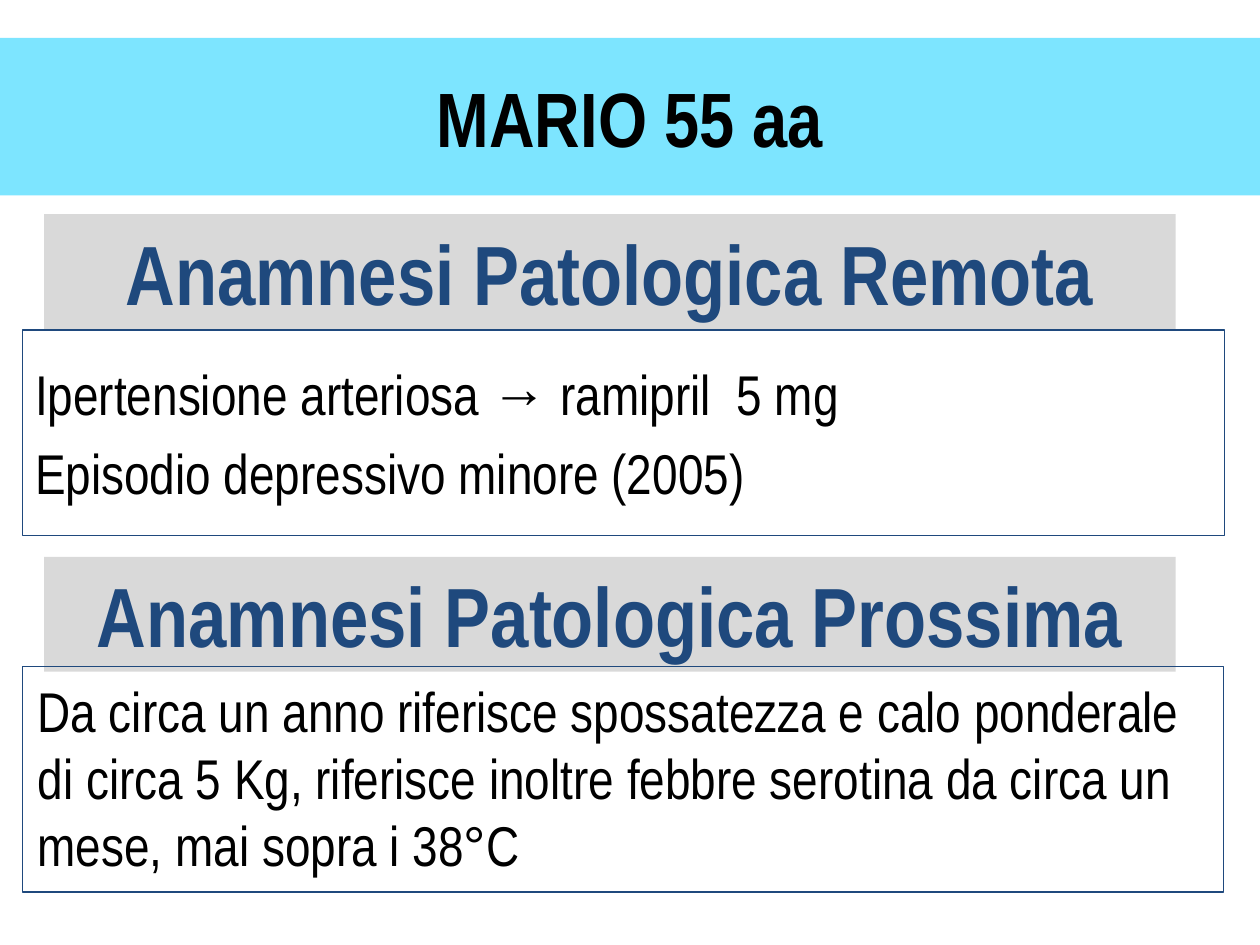
from lxml.etree import SubElement
from pptx import Presentation
from pptx.dml.color import RGBColor
from pptx.enum.shapes import MSO_SHAPE as Shape
from pptx.enum.text import MSO_ANCHOR as Anchor, PP_ALIGN as Align
from pptx.oxml.ns import qn
from pptx.util import Inches, Pt

COLORS = {"band": "00CCFF", "heading": "D9D9D9", "navy": "1F497D", "text": "000000"}
FONT = "Arial Narrow"
WIDTH, HEIGHT = 10, 7.5
LEFT = 0.18
HEADING_LEFT, HEADING_WIDTH, HEADING_HEIGHT = 0.35, 8.98, 0.91


def color(name):
    return RGBColor.from_string(COLORS[name])


def add_panel(slide, box, fill=None, line=None):
    panel = slide.shapes.add_shape(Shape.RECTANGLE, *map(Inches, box))
    panel.shadow.inherit = False
    if fill:
        panel.fill.solid()
        panel.fill.fore_color.rgb = color(fill)
    else:
        panel.fill.background()
    if line:
        panel.line.color.rgb = color(line)
        panel.line.width = Pt(0.75)
    else:
        panel.line.fill.background()
    return panel


def write(shape, text, size, ink="text", bold=False, align=Align.LEFT,
          anchor=Anchor.MIDDLE, space_before=0):
    frame = shape.text_frame
    frame.word_wrap = True
    frame.vertical_anchor = anchor
    frame.text = text
    for paragraph in frame.paragraphs:
        paragraph.alignment = align
        paragraph.space_before = Pt(space_before)
        for run in paragraph.runs:
            run.font.name = FONT
            run.font.size = Pt(size)
            run.font.bold = bold
            run.font.color.rgb = color(ink)


def add_title_band(slide, box, title):
    band = add_panel(slide, box, fill="band")
    tint = next(band.fill._xPr.iter(qn("a:srgbClr")))
    SubElement(tint, qn("a:alpha")).set("val", "51000")
    write(band, title, 44, bold=True, align=Align.CENTER)


def add_heading(slide, top, heading):
    bar = add_panel(slide, (HEADING_LEFT, top, HEADING_WIDTH, HEADING_HEIGHT), fill="heading")
    write(bar, heading, 48, ink="navy", bold=True, align=Align.CENTER)


def add_past_history(slide, box, findings):
    panel = add_panel(slide, box, line="navy")
    write(panel, "\n".join(findings), 32, space_before=6.4)


def add_recent_history(slide, box, account):
    """Frame the account, whose text sits slightly inside the frame."""
    left, top, width, height = box
    add_panel(slide, box, line="navy")
    account_box = slide.shapes.add_textbox(
        *map(Inches, (left + 0.02, top + 0.03, width, height - 0.07)))
    write(account_box, account, 32, anchor=Anchor.TOP)


def main():
    deck = Presentation()
    deck.slide_width, deck.slide_height = Inches(WIDTH), Inches(HEIGHT)
    slide = deck.slides.add_slide(deck.slide_layouts[6])

    add_title_band(slide, (0, 0.3, WIDTH, 1.25), "MARIO 55 aa")
    add_past_history(slide, (LEFT, 2.62, 9.54, 1.63), [
        "Ipertensione arteriosa → ramipril  5 mg",
        "Episodio depressivo minore (2005)",
    ])
    add_heading(slide, 1.7, "Anamnesi Patologica Remota")
    add_heading(slide, 4.42, "Anamnesi Patologica Prossima")
    add_recent_history(
        slide, (LEFT, 5.29, 9.53, 1.79),
        "Da circa un anno riferisce spossatezza e calo ponderale di circa 5 Kg, "
        "riferisce inoltre febbre serotina da circa un mese, mai sopra i 38°C")

    deck.save("out.pptx")


if __name__ == "__main__":
    main()
